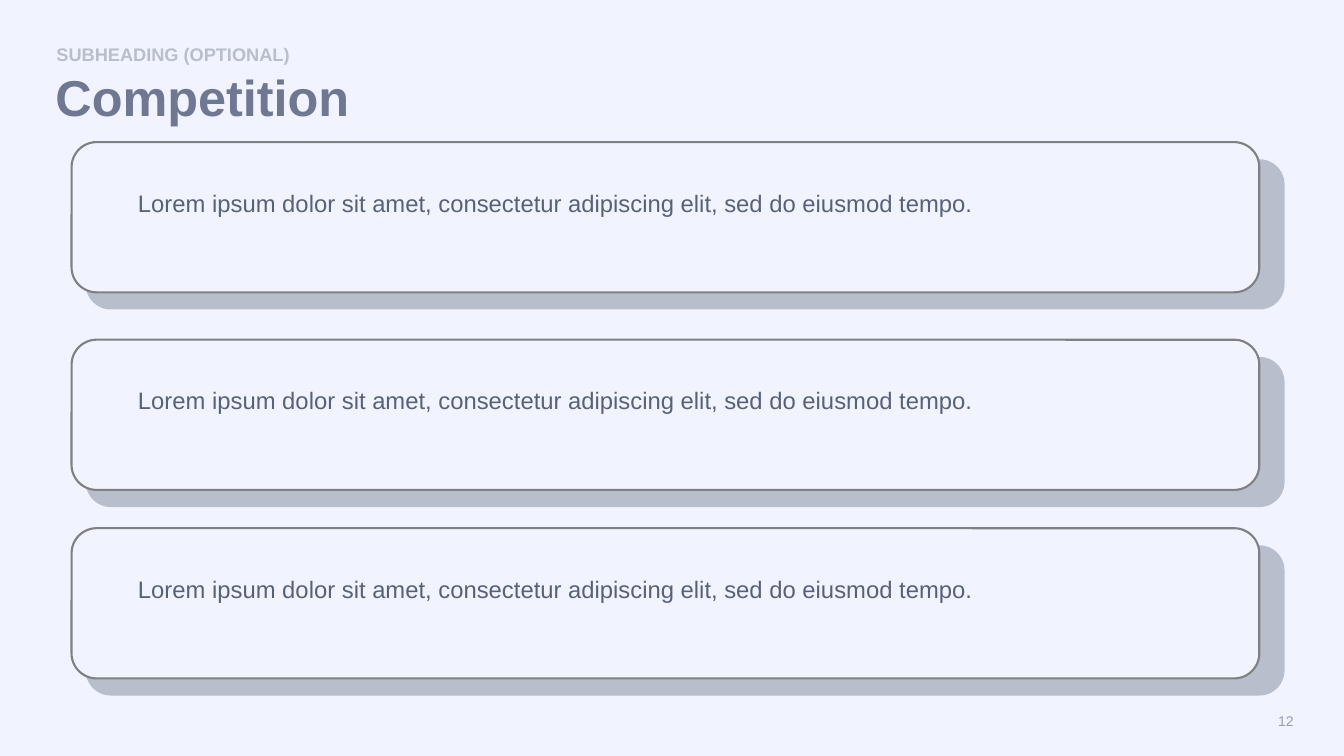
from lxml.etree import SubElement
from pptx import Presentation
from pptx.dml.color import RGBColor
from pptx.enum.shapes import MSO_SHAPE as Preset
from pptx.enum.text import MSO_ANCHOR as Anchor, MSO_AUTO_SIZE as AutoSize, PP_ALIGN as Align
from pptx.oxml.ns import qn
from pptx.util import Inches, Pt

PAPER = "F1F4FF"
MIST = "B9BECC"
SLATE = "6E7893"
INK = "586179"
OUTLINE = "808080"
PAGE_GREY = "969EB3"

CARD_TOPS = (1.41, 3.37, 5.24)
CARD_TEXT = "Lorem ipsum dolor sit amet, consectetur adipiscing elit, sed do eiusmod tempo."


def colour(value):
    return RGBColor.from_string(value)


class CardSlide:
    font = "Arial"

    def __init__(self, deck):
        self.slide = deck.slides.add_slide(deck.slide_layouts[1])
        background = self.slide.background.fill
        background.solid()
        background.fore_color.rgb = colour(PAPER)

    def set_text(self, frame, text, size, ink, bold=False, align=Align.LEFT):
        frame.word_wrap = True
        frame.text = text
        paragraph = frame.paragraphs[0]
        paragraph.alignment = align
        font = paragraph.runs[0].font
        font.name = self.font
        font.size = Pt(size)
        font.bold = bold
        font.color.rgb = colour(ink)
        return paragraph

    def heading(self, holder, box, text, size, ink):
        holder.left, holder.top, holder.width, holder.height = map(Inches, box)
        frame = holder.text_frame
        frame.auto_size = AutoSize.NONE
        frame.vertical_anchor = Anchor.TOP
        paragraph = self.set_text(frame, text, size, ink, bold=True)
        paragraph.line_spacing = 0.9
        return paragraph

    def title(self, text):
        self.heading(self.slide.shapes.title, (0.45, 0.67, 9.05, 0.88), text, 36, SLATE)

    def subheading(self, text):
        paragraph = self.heading(self.slide.placeholders[1], (0.46, 0.4, 4.05, 0.22), text, 13, MIST)
        paragraph.space_before = Pt(10)
        properties = paragraph._p.get_or_add_pPr()
        properties.set("marL", "0")
        properties.set("indent", "0")
        SubElement(properties, qn("a:buNone"))

    def panel(self, box, fill, line=None):
        panel = self.slide.shapes.add_shape(Preset.ROUNDED_RECTANGLE, *map(Inches, box))
        panel.shadow.inherit = False
        panel.fill.solid()
        panel.fill.fore_color.rgb = colour(fill)
        if line:
            panel.line.color.rgb = colour(line)
            panel.line.width = Pt(1.5)
        else:
            panel.line.fill.background()

    def text_box(self, box):
        return self.slide.shapes.add_textbox(*map(Inches, box)).text_frame

    def card(self, top, text):
        self.panel((0.85, top + 0.17, 11.89, 1.49), MIST)
        self.panel((0.71, top, 11.78, 1.49), PAPER, OUTLINE)
        frame = self.text_box((1.27, top + 0.36, 10.66, 0.49))
        frame.margin_top = frame.margin_bottom = Inches(0.1)
        self.set_text(frame, text, 17, INK)
        frame.auto_size = AutoSize.SHAPE_TO_FIT_TEXT

    def page_number(self, number):
        frame = self.text_box((9.93, 6.95, 3, 0.4))
        frame.vertical_anchor = Anchor.MIDDLE
        self.set_text(frame, number, 10, PAGE_GREY, align=Align.RIGHT)


def main():
    deck = Presentation()
    deck.slide_width = Inches(13.33)
    deck.slide_height = Inches(7.5)
    competition = CardSlide(deck)
    competition.title("Competition")
    competition.subheading("SUBHEADING (OPTIONAL)")
    for top in CARD_TOPS:
        competition.card(top, CARD_TEXT)
    competition.page_number("12")
    deck.save("out.pptx")


if __name__ == "__main__":
    main()
